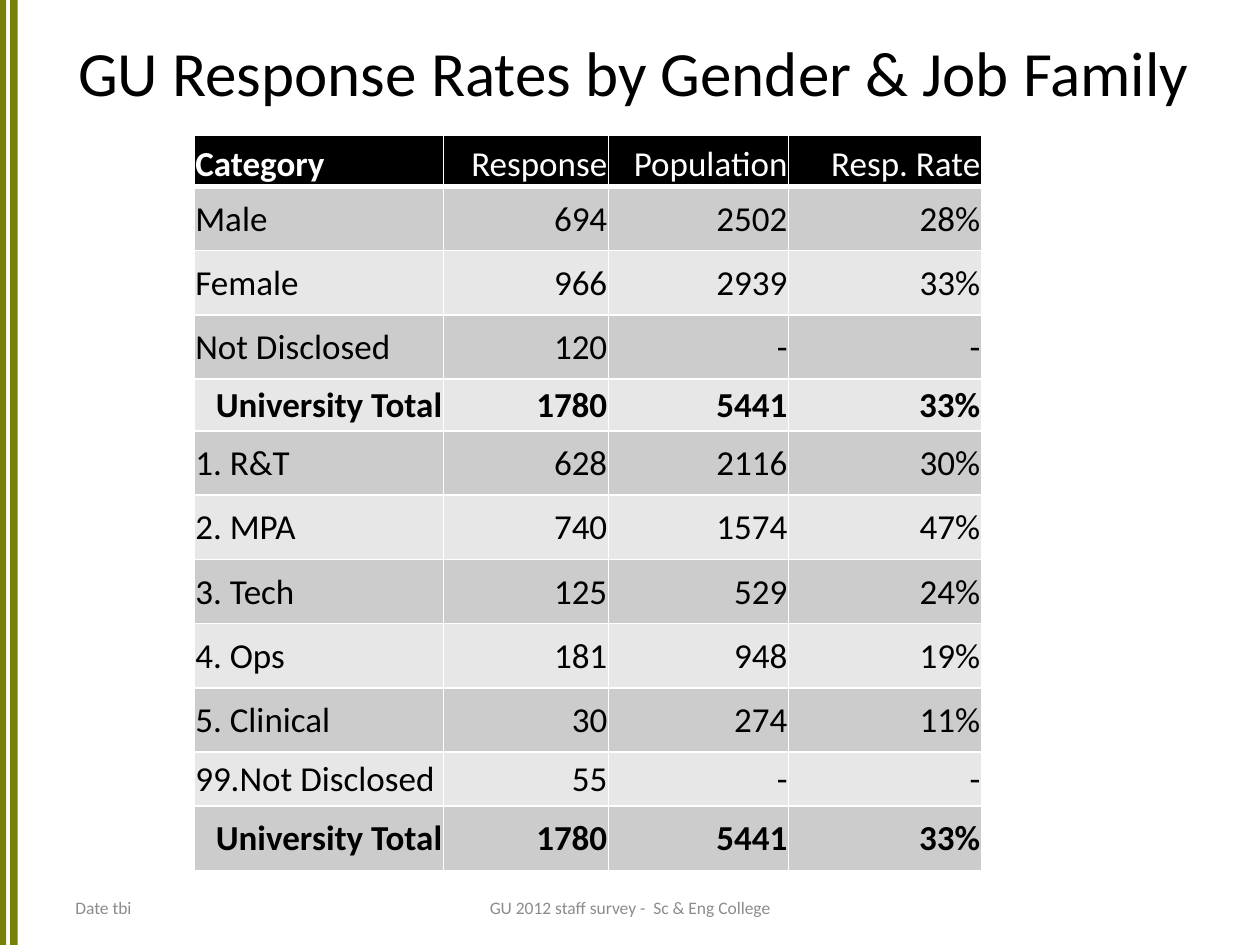
from lxml import etree
from pptx import Presentation
from pptx.dml.color import RGBColor
from pptx.enum.shapes import MSO_SHAPE
from pptx.enum.text import MSO_ANCHOR, PP_ALIGN
from pptx.oxml.ns import qn
from pptx.util import Inches, Pt

RECTANGLE = MSO_SHAPE.RECTANGLE
MIDDLE, BOTTOM = MSO_ANCHOR.MIDDLE, MSO_ANCHOR.BOTTOM
LEFT, CENTER, RIGHT = PP_ALIGN.LEFT, PP_ALIGN.CENTER, PP_ALIGN.RIGHT

FONT = "Calibri"
COLORS = {
    "olive": "778109",
    "black": "000000",
    "white": "FFFFFF",
    "odd_row": "CCCCCC",
    "even_row": "E7E7E7",
    "footer": "8C8C8C",
}

TOTAL = "University Total"
TOTAL_ROW = (TOTAL, "1780", "5441", "33%")
RESPONSE_ROWS = [
    ("Category", "Response", "Population", "Resp. Rate"),
    ("Male", "694", "2502", "28%"),
    ("Female", "966", "2939", "33%"),
    ("Not Disclosed", "120", "-", "-"),
    TOTAL_ROW,
    ("1. R&T", "628", "2116", "30%"),
    ("2. MPA", "740", "1574", "47%"),
    ("3. Tech", "125", "529", "24%"),
    ("4. Ops", "181", "948", "19%"),
    ("5. Clinical", "30", "274", "11%"),
    ("99.Not Disclosed", "55", "-", "-"),
    TOTAL_ROW,
]
COLUMN_WIDTHS = (1.98, 1.31, 1.43, 1.53)
ROW_HEIGHT = 0.51
SHORT_ROWS = {0: 0.41, 4: 0.41, 10: 0.43}


def color(name):
    return RGBColor.from_string(COLORS[name])


def write(paragraph, text, size, color_name, align, bold=False):
    paragraph.alignment = align
    run = paragraph.add_run()
    run.text = text
    run.font.name = FONT
    run.font.size = Pt(size)
    run.font.bold = bold
    run.font.color.rgb = color(color_name)


def add_text(slide, box, text, size, color_name, align):
    text_box = slide.shapes.add_textbox(*map(Inches, box))
    frame = text_box.text_frame
    frame.word_wrap = True
    frame.vertical_anchor = MIDDLE
    write(frame.paragraphs[0], text, size, color_name, align)


def add_side_bars(slide, box):
    left, top, width, height = box
    bar_width = 0.06
    for bar_left in (left, left + width - bar_width):
        bar = slide.shapes.add_shape(
            RECTANGLE, Inches(bar_left), Inches(top), Inches(bar_width), Inches(height)
        )
        bar.shadow.inherit = False
        bar.fill.solid()
        bar.fill.fore_color.rgb = color("olive")
        bar.line.fill.background()


def set_borders(cell, bottom_width):
    properties = cell._tc.get_or_add_tcPr()
    widths = {"a:lnL": 1, "a:lnR": 1, "a:lnT": 1, "a:lnB": bottom_width}
    for position, (tag, width) in enumerate(widths.items()):
        line = etree.Element(qn(tag), w=str(Pt(width)))
        fill = etree.SubElement(line, qn("a:solidFill"))
        etree.SubElement(fill, qn("a:srgbClr"), val=COLORS["white"])
        properties.insert(position, line)


def fill_cell(cell, text, row_index, column_index, bold):
    is_header = row_index == 0
    if is_header:
        fill_name = "black"
    else:
        fill_name = "odd_row" if row_index % 2 else "even_row"
    cell.fill.solid()
    cell.fill.fore_color.rgb = color(fill_name)
    cell.margin_left = cell.margin_right = cell.margin_top = Inches(0.01)
    cell.margin_bottom = 0
    cell.vertical_anchor = BOTTOM if is_header else MIDDLE
    align = LEFT if column_index == 0 and text != TOTAL else RIGHT
    text_color = "white" if is_header else "black"
    write(cell.text_frame.paragraphs[0], text, 20, text_color, align, bold)
    set_borders(cell, 3 if is_header else 1)


def add_response_table(slide, box):
    table = slide.shapes.add_table(
        len(RESPONSE_ROWS), len(COLUMN_WIDTHS), *map(Inches, box)
    ).table
    for column, width in zip(table.columns, COLUMN_WIDTHS):
        column.width = Inches(width)
    for row_index, values in enumerate(RESPONSE_ROWS):
        table.rows[row_index].height = Inches(SHORT_ROWS.get(row_index, ROW_HEIGHT))
        for column_index, text in enumerate(values):
            bold = values[0] == TOTAL or text == "Category"
            cell = table.cell(row_index, column_index)
            fill_cell(cell, text, row_index, column_index, bold)


def add_footer(slide, box):
    left, top, width, height = box
    add_text(slide, (left, top, 2.33, height), "Date tbi", 10, "footer", LEFT)
    center_width = 3.17
    center_left = left + (width - center_width) / 2
    add_text(
        slide,
        (center_left, top, center_width, height),
        "GU 2012 staff survey -  Sc & Eng College",
        10,
        "footer",
        CENTER,
    )


def main():
    presentation = Presentation()
    presentation.slide_width = Inches(10)
    presentation.slide_height = Inches(7.5)
    slide = presentation.slides.add_slide(presentation.slide_layouts[6])
    add_side_bars(slide, (-0.01, 0, 0.15, 7.5))
    add_text(
        slide,
        (0.5, 0.13, 9.06, 0.87),
        "GU Response Rates by Gender & Job Family",
        36,
        "black",
        CENTER,
    )
    add_response_table(slide, (1.54, 1.07, 6.25, 5.85))
    add_footer(slide, (0.5, 7.06, 9, 0.29))
    presentation.save("out.pptx")


if __name__ == "__main__":
    main()
